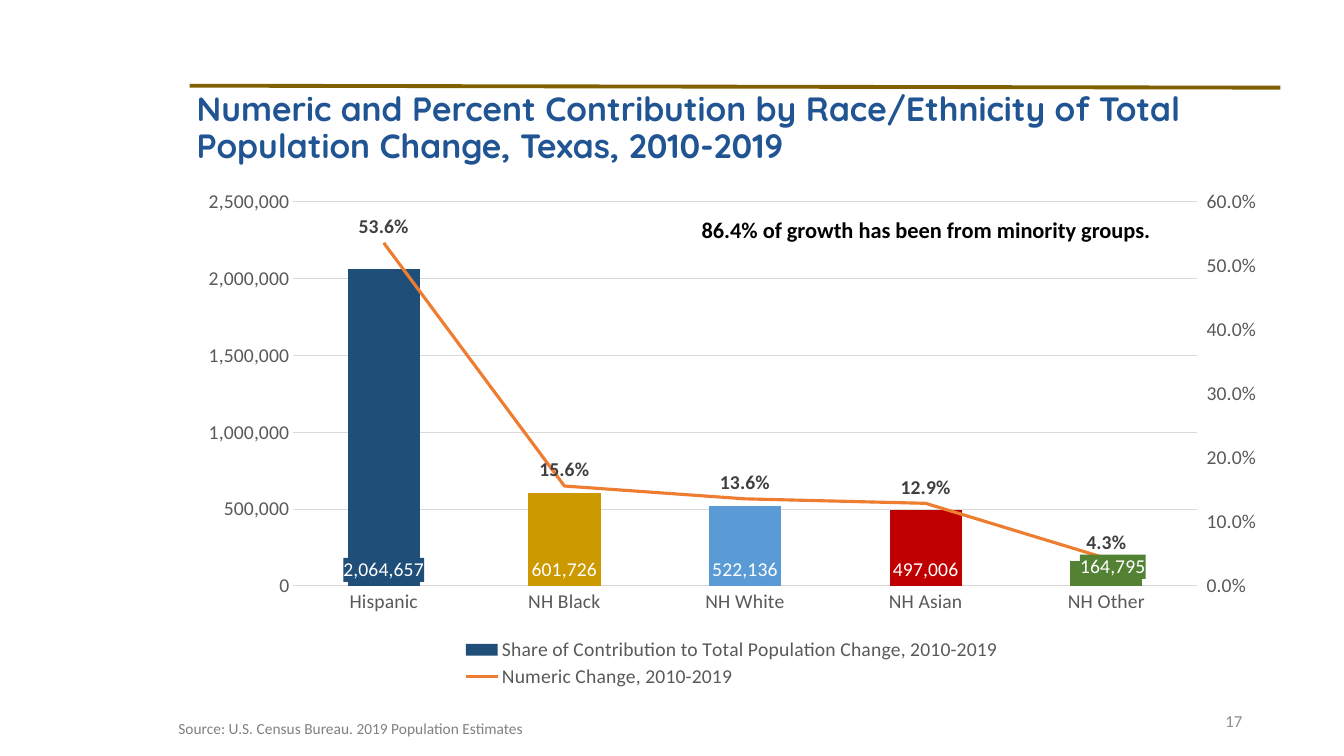
from lxml import etree
from pptx import Presentation
from pptx import util as u
from pptx.chart.data import CategoryChartData
from pptx.dml.color import RGBColor
from pptx.enum import chart as ch
from pptx.enum import shapes, text
from pptx.oxml import parse_xml
from pptx.oxml.ns import nsdecls, qn

WIDTH, HEIGHT = u.Inches(13.33), u.Inches(7.5)
COLUMNS, ROWS = 1333, 750  # grid cells of one hundredth of an inch
COLORS = {
    "rule": "806000", "title": "205493", "note": "000000", "source": "808080",
    "number": "8C8C8C", "axis": "595959", "grid": "D9D9D9", "label": "404040",
    "line": "ED7D31", "white": "FFFFFF",
}
GROUPS = [  # name, numeric change, share of the change, bar colour
    ("Hispanic", 2064657, 0.536, "1F4E79"),
    ("NH Black", 601726, 0.156, "CC9900"),
    ("NH White", 522136, 0.136, "5B9BD5"),
    ("NH Asian", 497006, 0.129, "C00000"),
    ("NH Other", 164795, 0.043, "548235"),
]
LINE_PLOT = """<c:lineChart {ns}><c:grouping val="standard"/><c:varyColors val="0"/>
<c:marker val="1"/><c:axId val="5001"/><c:axId val="5002"/></c:lineChart>"""
RIGHT_AXES = ("""<c:valAx {ns}><c:axId val="5002"/>
<c:scaling><c:orientation val="minMax"/><c:max val="0.6"/><c:min val="0"/></c:scaling>
<c:delete val="0"/><c:axPos val="r"/><c:numFmt formatCode="0.0%" sourceLinked="0"/>
<c:majorTickMark val="out"/><c:minorTickMark val="none"/><c:tickLblPos val="nextTo"/>
<c:spPr><a:ln><a:noFill/></a:ln></c:spPr>
<c:crossAx val="5001"/><c:crosses val="max"/><c:majorUnit val="0.1"/></c:valAx>""",
"""<c:catAx {ns}><c:axId val="5001"/>
<c:scaling><c:orientation val="minMax"/></c:scaling><c:delete val="1"/>
<c:axPos val="b"/><c:crossAx val="5002"/><c:crosses val="autoZero"/></c:catAx>""")


def rgb(name):
    return RGBColor.from_string(COLORS.get(name, name))


def cells(column, row, wide, high):
    return (int(WIDTH * column / COLUMNS), int(HEIGHT * row / ROWS),
            int(WIDTH * wide / COLUMNS), int(HEIGHT * high / ROWS))


def chart_xml(template):
    return parse_xml(template.format(ns=nsdecls("c", "a")))


def style(font, size, color, bold=False, name="Calibri"):
    font.size, font.bold, font.name = u.Pt(size), bold, name
    font.color.rgb = rgb(color)


def add_rule(page):
    left, top, wide, high = cells(188, 85, 1082, 2)
    rule = page.shapes.add_connector(
        shapes.MSO_CONNECTOR.STRAIGHT, left, top, left + wide, top + high)
    rule.line.color.rgb = rgb("rule")
    rule.line.width = u.Pt(2.75)
    etree.SubElement(rule._element.spPr, qn("a:effectLst"))


def fill_title(page, words):
    box = page.shapes.title
    box.left, box.top, box.width, box.height = cells(185, 87, 1082, 600)
    frame = box.text_frame
    frame.text = words
    frame.auto_size = text.MSO_AUTO_SIZE.NONE
    frame.word_wrap = True
    frame.vertical_anchor = text.MSO_ANCHOR.TOP
    para = frame.paragraphs[0]
    para.alignment = text.PP_ALIGN.LEFT
    para.line_spacing = 0.9
    style(para.runs[0].font, 24, "title", True, "Quicksand")


def add_text(page, place, words, size, color, bold=False,
             align=text.PP_ALIGN.LEFT, wrap=True):
    frame = page.shapes.add_textbox(*cells(*place)).text_frame
    frame.text = words
    frame.word_wrap = wrap
    frame.vertical_anchor = text.MSO_ANCHOR.MIDDLE
    para = frame.paragraphs[0]
    para.alignment = align
    style(para.runs[0].font, size, color, bold)


def manual_layout(mode="", **shares):
    """Build a chart layout from shares of the chart's size."""
    target = '<c:layoutTarget val="inner"/>' if mode == "inner" else ""
    edges = "" if mode == "offset" else '<c:xMode val="edge"/><c:yMode val="edge"/>'
    sizes = "".join(f'<c:{key} val="{share}"/>' for key, share in shares.items())
    return chart_xml("<c:layout {ns}><c:manualLayout>" + target + edges + sizes
                     + "</c:manualLayout></c:layout>")


def replace_layout(parent, layout, before):
    for old in parent.findall(qn("c:layout")):
        parent.remove(old)
    before.addprevious(layout)


def move_to_right_axis(chart):
    """Turn the second bar series into a line on an axis of its own."""
    bars = chart._chartSpace.find(".//" + qn("c:barChart"))
    series = bars.findall(qn("c:ser"))[1]
    invert = series.find(qn("c:invertIfNegative"))
    if invert is not None:
        series.remove(invert)
    line = chart_xml(LINE_PLOT)
    line.find(qn("c:marker")).addprevious(series)
    bars.addnext(line)
    last_axis = bars.getparent().findall(qn("c:valAx"))[-1]
    for axis in reversed(RIGHT_AXES):
        last_axis.addnext(chart_xml(axis))


def format_axes(chart):
    category, value = chart.category_axis, chart.value_axis
    for axis in (category, value):
        style(axis.tick_labels.font, 14, "axis")
        axis.major_tick_mark = ch.XL_TICK_MARK.NONE
    category.format.line.color.rgb = rgb("grid")
    category.format.line.width = u.Pt(0.75)
    value.minimum_scale, value.maximum_scale, value.major_unit = 0, 2500000, 500000
    value.tick_labels.number_format = "#,##0"
    value.tick_labels.number_format_is_linked = False
    value.format.line.fill.background()
    value.major_gridlines.format.line.color.rgb = rgb("grid")
    value.major_gridlines.format.line.width = u.Pt(0.75)


def format_labels(labels, code, position, bold=False):
    labels.show_value = True
    labels.number_format, labels.number_format_is_linked = code, False
    labels.position = position
    style(labels.font, 14, "label", bold)


def format_bars(plot):
    plot.gap_width = 150
    plot.vary_by_categories = False
    series = plot.series[0]
    series.format.fill.solid()
    series.format.fill.fore_color.rgb = rgb(GROUPS[0][3])
    base = ch.XL_LABEL_POSITION.INSIDE_BASE
    format_labels(series.data_labels, "#,##0", base)
    for index, (_, _, _, color) in enumerate(GROUPS):
        point = series.points[index]
        point.format.fill.solid()
        point.format.fill.fore_color.rgb = rgb(color)
        style(point.data_label.font, 14, "white")
        point.data_label.position = base
        label = series.data_labels._element.findall(qn("c:dLbl"))[index]
        properties = label.find(qn("c:txPr"))
        for old in label.findall(qn("c:spPr")):
            label.remove(old)
        properties.addprevious(chart_xml(
            '<c:numFmt {ns} formatCode="#,##0" sourceLinked="0"/>'))
        properties.addprevious(chart_xml(
            f'<c:spPr {{ns}}><a:solidFill><a:srgbClr val="{color}"/></a:solidFill></c:spPr>'))
    nudge = manual_layout("offset", x=0.006, y=-0.006)
    replace_layout(label, nudge, label.find(qn("c:numFmt")))


def format_line(plot):
    series = plot.series[0]
    series.smooth = False
    series.marker.style = ch.XL_MARKER_STYLE.NONE
    series.format.line.color.rgb = rgb("line")
    series.format.line.width = u.Pt(2.25)
    format_labels(series.data_labels, "0.0%", ch.XL_LABEL_POSITION.ABOVE, True)


def add_growth_chart(page):
    names, changes, portions, _ = zip(*GROUPS)
    data = CategoryChartData()
    data.categories = names
    data.add_series("Share of Contribution to Total Population Change, 2010-2019",
                    changes, "#,##0")
    data.add_series("Numeric Change, 2010-2019", portions, "0.0%")
    chart = page.shapes.add_chart(ch.XL_CHART_TYPE.COLUMN_CLUSTERED,
                                  *cells(185, 178, 1082, 508), data).chart
    style(chart.font, 14, "axis")
    chart.has_title = False
    format_axes(chart)
    move_to_right_axis(chart)
    bars, line = chart.plots
    format_bars(bars)
    format_line(line)
    chart.has_legend = True
    legend = chart.legend
    legend.position = ch.XL_LEGEND_POSITION.BOTTOM
    legend.include_in_layout = False
    style(legend.font, 14, "axis")
    replace_layout(legend._element, manual_layout(x=0.25, y=0.89, w=0.5, h=0.11),
                   legend._element.find(qn("c:overlay")))
    area = chart._chartSpace.find(".//" + qn("c:plotArea"))
    replace_layout(area, manual_layout("inner", x=0.098, y=0.044, w=0.828, h=0.75),
                   area.find(qn("c:barChart")))


def main():
    deck = Presentation()
    deck.slide_width, deck.slide_height = WIDTH, HEIGHT
    page = deck.slides.add_slide(deck.slide_layouts.get_by_name("Title Only"))
    add_rule(page)
    fill_title(page, "Numeric and Percent Contribution by Race/Ethnicity of Total "
                     "Population Change, Texas, 2010-2019")
    add_text(page, (942, 695, 300, 40), "17", 12, "number", align=text.PP_ALIGN.RIGHT)
    add_growth_chart(page)
    add_text(page, (686, 209, 472, 37), "86.4% of growth has been from minority groups.",
             16, "note", bold=True, wrap=False)
    add_text(page, (167, 708, 875, 29),
             "Source: U.S. Census Bureau. 2019 Population Estimates", 11, "source")
    deck.save("out.pptx")


if __name__ == "__main__":
    main()
